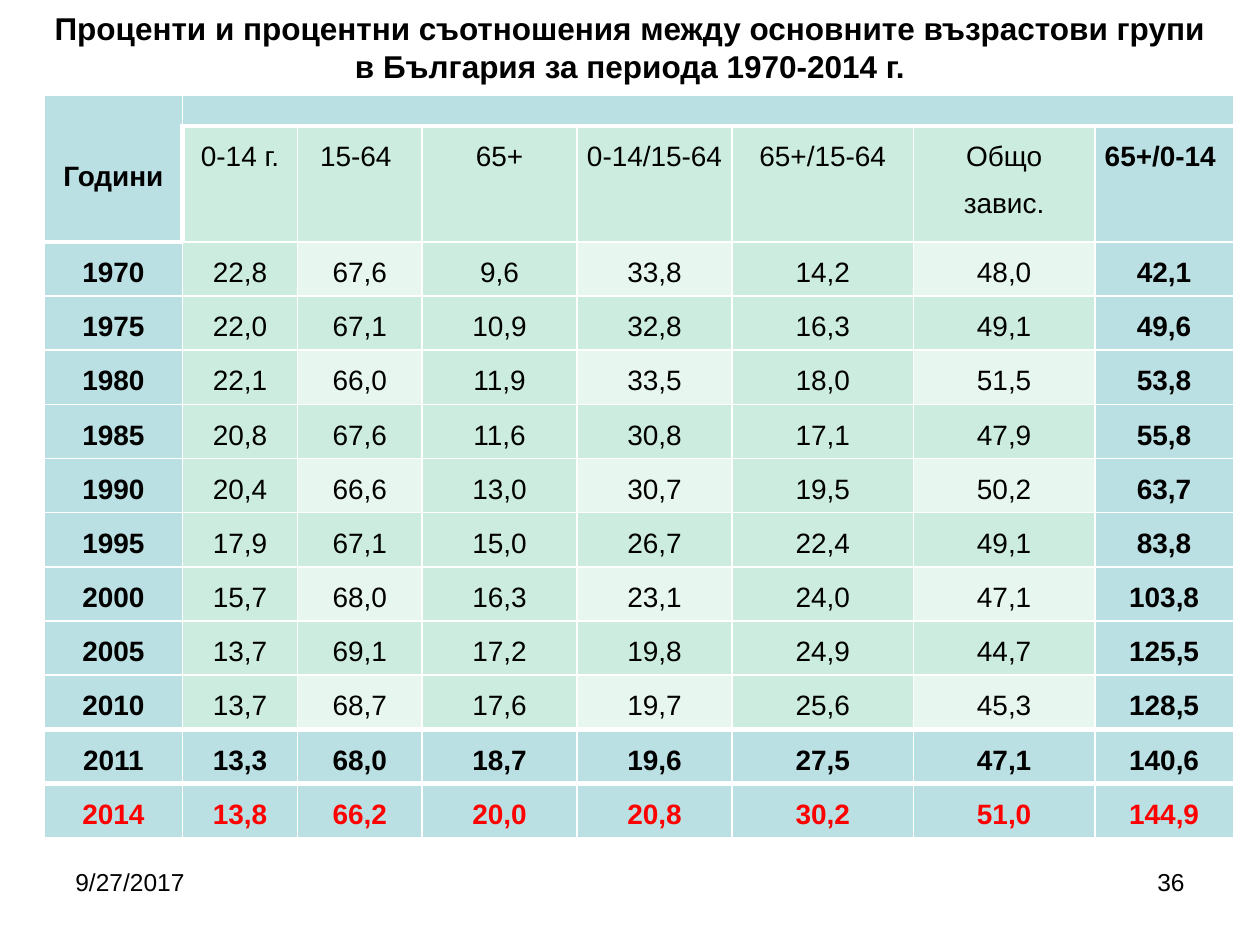
import pptx
import pptx.dml.color
import pptx.enum.text
import pptx.oxml.ns
import pptx.util
from lxml import etree
from pptx.util import Inches

TITLE = [
    "Проценти и процентни съотношения между основните възрастови групи",
    "в България за периода 1970-2014 г.",
]
DATE = "9/27/2017"
PAGE_NUMBER = "36"
YEARS_HEADING = "Години"
GROUPS = ["0-14 г.", "15-64 ", "65+", "0-14/15-64", "65+/15-64", "Общо завис.", "65+/0-14 "]
SHARES = [
    ["1970", "22,8", "67,6", "9,6", "33,8", "14,2", "48,0", "42,1"],
    ["1975", "22,0", "67,1", "10,9", "32,8", "16,3", "49,1", "49,6"],
    ["1980", "22,1", "66,0", "11,9", "33,5", "18,0", "51,5", "53,8"],
    ["1985", "20,8", "67,6", "11,6", "30,8", "17,1", "47,9", "55,8"],
    ["1990", "20,4", "66,6", "13,0", "30,7", "19,5", "50,2", "63,7"],
    ["1995", "17,9", "67,1", "15,0", "26,7", "22,4", "49,1", "83,8"],
    ["2000", "15,7", "68,0", "16,3", "23,1", "24,0", "47,1", "103,8"],
    ["2005", "13,7", "69,1", "17,2", "19,8", "24,9", "44,7", "125,5"],
    ["2010", "13,7", "68,7", "17,6", "19,7", "25,6", "45,3", "128,5"],
    ["2011", "13,3", "68,0", "18,7", "19,6", "27,5", "47,1", "140,6"],
    ["2014", "13,8", "66,2", "20,0", "20,8", "30,2", "51,0", "144,9"],
]
THEME = {
    "font": "Arial", "title": 18, "table": 16, "footer": 14, "empty": 10,
    "text": "000000", "alert": "FF0000", "rule": "FFFFFF",
    "accent": "BBE0E3", "band": "CBECDE", "light": "E7F6EF",
    "thin": 1, "thick": 3,
}
COLUMN_WIDTHS = [1.1, 0.91, 0.99, 1.23, 1.23, 1.44, 1.44, 1.1]
ROW_HEIGHTS = [0.24, 0.92] + [0.43] * len(SHARES)
ALIGN = pptx.enum.text.PP_ALIGN
ANCHOR = pptx.enum.text.MSO_ANCHOR


def rgb(name):
    return pptx.dml.color.RGBColor.from_string(THEME[name])


def write(frame, text, size, bold=False, color="text", align=ALIGN.LEFT, spacing=None):
    frame.word_wrap = True
    for index, line in enumerate(text.split("\n")):
        paragraph = frame.add_paragraph() if index else frame.paragraphs[0]
        paragraph.alignment = align
        if spacing:
            paragraph.line_spacing = spacing
        if not line:
            end = etree.SubElement(paragraph._p, pptx.oxml.ns.qn("a:endParaRPr"))
            end.set("sz", str(THEME["empty"] * 100))
            continue
        run = paragraph.add_run()
        run.text = line
        run.font.name = THEME["font"]
        run.font.size = pptx.util.Pt(THEME[size])
        run.font.bold = bold
        run.font.color.rgb = rgb(color)


def add_text(slide, box, text, size, **style):
    frame = slide.shapes.add_textbox(*map(Inches, box)).text_frame
    write(frame, text, size, **style)


def draw_borders(cell, thick_sides):
    properties = cell._tc.get_or_add_tcPr()
    for side in "LRTB":
        width = THEME["thick" if side in thick_sides else "thin"]
        line = etree.SubElement(properties, pptx.oxml.ns.qn(f"a:ln{side}"))
        line.set("w", str(pptx.util.Pt(width)))
        fill = etree.SubElement(line, pptx.oxml.ns.qn("a:solidFill"))
        etree.SubElement(fill, pptx.oxml.ns.qn("a:srgbClr")).set("val", THEME["rule"])


def thick_sides(row, column, last_row):
    sides = ""
    if row in (1, last_row - 1, last_row) and (row, column) != (1, 0) or (row, column) == (2, 0):
        sides += "T"
    if row in (0, last_row - 2, last_row - 1) and (row, column) != (0, 0) or (row, column) == (1, 0):
        sides += "B"
    if row == 1 and column < 2:
        sides += "RL"[column]
    return sides


def is_accent(row, column, last_row):
    return row == 0 or row >= last_row - 1 or column in (0, len(GROUPS))


def add_shares_table(slide):
    rows = [[YEARS_HEADING] + [""] * len(GROUPS), [""] + GROUPS] + SHARES
    last_row = len(rows) - 1
    table = slide.shapes.add_table(
        len(rows), len(COLUMN_WIDTHS), Inches(0.35), Inches(0.76),
        Inches(sum(COLUMN_WIDTHS)), Inches(sum(ROW_HEIGHTS)),
    ).table
    for column, width in zip(table.columns, COLUMN_WIDTHS):
        column.width = Inches(width)
    for row, height in zip(table.rows, ROW_HEIGHTS):
        row.height = Inches(height)
    for r, values in enumerate(rows):
        for c, value in enumerate(values):
            cell = table.cell(r, c)
            accent = is_accent(r, c, last_row)
            cell.margin_left = cell.margin_right = Inches(0.07)
            cell.margin_top = cell.margin_bottom = 0
            draw_borders(cell, thick_sides(r, c, last_row))
            light = r > 1 and r % 2 == 0 and c % 2 == 0
            cell.fill.solid()
            cell.fill.fore_color.rgb = rgb("accent" if accent else "light" if light else "band")
            write(cell.text_frame, value, "table", bold=accent, align=ALIGN.CENTER,
                  color="alert" if r == last_row else "text", spacing=1.5 if value else None)
    table.cell(0, 0).vertical_anchor = ANCHOR.MIDDLE
    table.cell(0, 0).merge(table.cell(1, 0))
    table.cell(0, 1).merge(table.cell(0, len(GROUPS)))


def main():
    deck = pptx.Presentation()
    deck.slide_width, deck.slide_height = Inches(10), Inches(7.5)
    slide = deck.slides.add_slide(deck.slide_layouts[6])
    add_shares_table(slide)
    add_text(slide, (0.5, 6.83, 2.33, 0.52), DATE, "footer")
    add_text(slide, (7.17, 6.83, 2.33, 0.52), PAGE_NUMBER, "footer", align=ALIGN.RIGHT)
    add_text(slide, (0, 0.02, 10, 0.71), "\n".join(TITLE), "title", bold=True, align=ALIGN.CENTER)
    deck.save("out.pptx")


if __name__ == "__main__":
    main()
